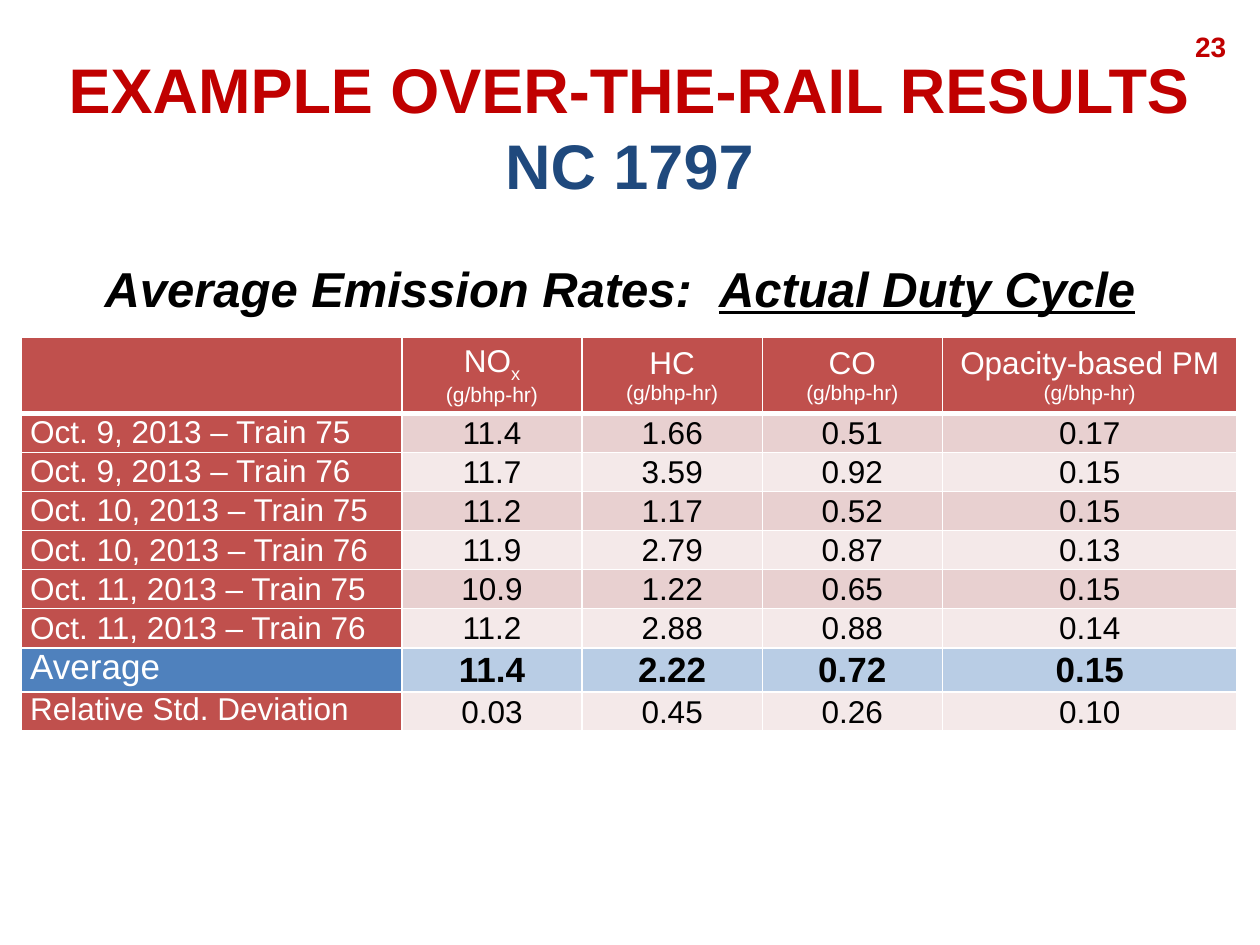
"""Build a slide with a table of locomotive emission rates."""
from lxml.etree import SubElement
from pptx import Presentation
from pptx.dml.color import RGBColor
from pptx.enum.text import MSO_ANCHOR, MSO_AUTO_SIZE, PP_ALIGN
from pptx.oxml.ns import qn
from pptx.util import Inches, Pt

COLORS = {
    "title": "C00000", "subtitle": "1F497D", "red": "C0504D", "blue": "4F81BD",
    "band": "E8D0D0", "light": "F4E9E9", "average": "B9CDE5",
    "white": "FFFFFF", "black": "000000",
}
COLUMN_WIDTHS = [3.02, 1.43, 1.43, 1.43, 2.34]
HEADERS = [("NO", "x"), ("HC", ""), ("CO", ""), ("Opacity-based PM", "")]
ROWS = [
    ("Oct. 9, 2013 – Train 75", "11.4", "1.66", "0.51", "0.17"),
    ("Oct. 9, 2013 – Train 76", "11.7", "3.59", "0.92", "0.15"),
    ("Oct. 10, 2013 – Train 75", "11.2", "1.17", "0.52", "0.15"),
    ("Oct. 10, 2013 – Train 76", "11.9", "2.79", "0.87", "0.13"),
    ("Oct. 11, 2013 – Train 75", "10.9", "1.22", "0.65", "0.15"),
    ("Oct. 11, 2013 – Train 76", "11.2", "2.88", "0.88", "0.14"),
    ("Average", "11.4", "2.22", "0.72", "0.15"),
    ("Relative Std. Deviation", "0.03", "0.45", "0.26", "0.10"),
]


def add_run(paragraph, text, size, color, bold=False):
    run = paragraph.add_run()
    run.text = text
    run.font.name = "Arial"
    run.font.size = Pt(size)
    run.font.bold = bold
    run.font.color.rgb = RGBColor.from_string(COLORS[color])
    return run


def style_cell(cell, color, margins, bottom_width=1):
    cell.margin_left = cell.margin_right = Inches(margins[0])
    cell.margin_top, cell.margin_bottom = Inches(margins[1]), 0
    properties = cell._tc.get_or_add_tcPr()
    for side in ("lnL", "lnR", "lnT", "lnB"):
        width = bottom_width if side == "lnB" else 1
        line = SubElement(properties, qn(f"a:{side}"), w=str(Pt(width)))
        fill = SubElement(line, qn("a:solidFill"))
        SubElement(fill, qn("a:srgbClr"), val=COLORS["white"])
    cell.fill.solid()
    cell.fill.fore_color.rgb = RGBColor.from_string(COLORS[color])


presentation = Presentation()
presentation.slide_width, presentation.slide_height = Inches(10), Inches(7.5)
slide = presentation.slides.add_slide(presentation.slide_layouts[5])

number_box = slide.shapes.add_textbox(Inches(7.5), Inches(0.17), Inches(2.33), Inches(0.4))
number_box.text_frame.word_wrap = True
number_box.text_frame.vertical_anchor = MSO_ANCHOR.MIDDLE
paragraph = number_box.text_frame.paragraphs[0]
paragraph.alignment = PP_ALIGN.RIGHT
add_run(paragraph, "23", 16, "title", True)

title = slide.shapes.title
title.left, title.top = Inches(0.33), Inches(0.3)
title.width, title.height = Inches(9.33), Inches(1.41)
title.text_frame.auto_size = MSO_AUTO_SIZE.NONE
title.text_frame.vertical_anchor = MSO_ANCHOR.MIDDLE
paragraph = title.text_frame.paragraphs[0]
paragraph.alignment = PP_ALIGN.CENTER
add_run(paragraph, "EXAMPLE OVER-THE-RAIL RESULTS", 36, "title", True)
paragraph.add_line_break()
add_run(paragraph, "NC 1797", 36, "subtitle", True)

table = slide.shapes.add_table(
    len(ROWS) + 1, len(COLUMN_WIDTHS), Inches(0.17), Inches(2.68), Inches(9.65), Inches(2.98)
).table
for column, width in zip(table.columns, COLUMN_WIDTHS):
    column.width = Inches(width)

table.rows[0].height = Inches(0.6)
for cell in table.rows[0].cells:
    style_cell(cell, "red", (0.07, 0), 3)
for column_index, (name, subscript) in enumerate(HEADERS, 1):
    cell = table.cell(0, column_index)
    cell.vertical_anchor = MSO_ANCHOR.MIDDLE
    paragraph = cell.text_frame.paragraphs[0]
    paragraph.alignment = PP_ALIGN.CENTER
    add_run(paragraph, name, 18, "white")
    if subscript:
        run = add_run(paragraph, subscript, 18, "white")
        run.font._element.set("baseline", "-25000")
    paragraph = cell.text_frame.add_paragraph()
    paragraph.alignment = PP_ALIGN.CENTER
    add_run(paragraph, "(g/bhp-hr)", 12, "white")

for row_index, (label, *values) in enumerate(ROWS, 1):
    is_average = label == "Average"
    size = 20 if is_average else 18
    band = "average" if is_average else "band" if row_index % 2 and row_index < 7 else "light"
    table.rows[row_index].height = Inches(0.35 if is_average else 0.29)
    cell = table.cell(row_index, 0)
    style_cell(cell, "blue" if is_average else "red", (0.07, 0))
    cell.vertical_anchor = MSO_ANCHOR.MIDDLE if row_index < 7 else MSO_ANCHOR.TOP
    add_run(cell.text_frame.paragraphs[0], label, size, "white")
    for column_index, value in enumerate(values, 1):
        cell = table.cell(row_index, column_index)
        style_cell(cell, band, (0.01, 0.01))
        cell.vertical_anchor = MSO_ANCHOR.MIDDLE
        paragraph = cell.text_frame.paragraphs[0]
        paragraph.alignment = PP_ALIGN.CENTER
        add_run(paragraph, value, size, "black", is_average)

caption = slide.shapes.add_textbox(Inches(0.42), Inches(2), Inches(9), Inches(0.57))
caption.text_frame.word_wrap = True
caption.text_frame.auto_size = MSO_AUTO_SIZE.SHAPE_TO_FIT_TEXT
paragraph = caption.text_frame.paragraphs[0]
paragraph.alignment = PP_ALIGN.CENTER
for text, underline in (("Average Emission Rates:  ", False), ("Actual Duty Cycle", True)):
    run = add_run(paragraph, text, 28, "black", True)
    run.font.italic = True
    run.font.underline = underline

presentation.save("out.pptx")
